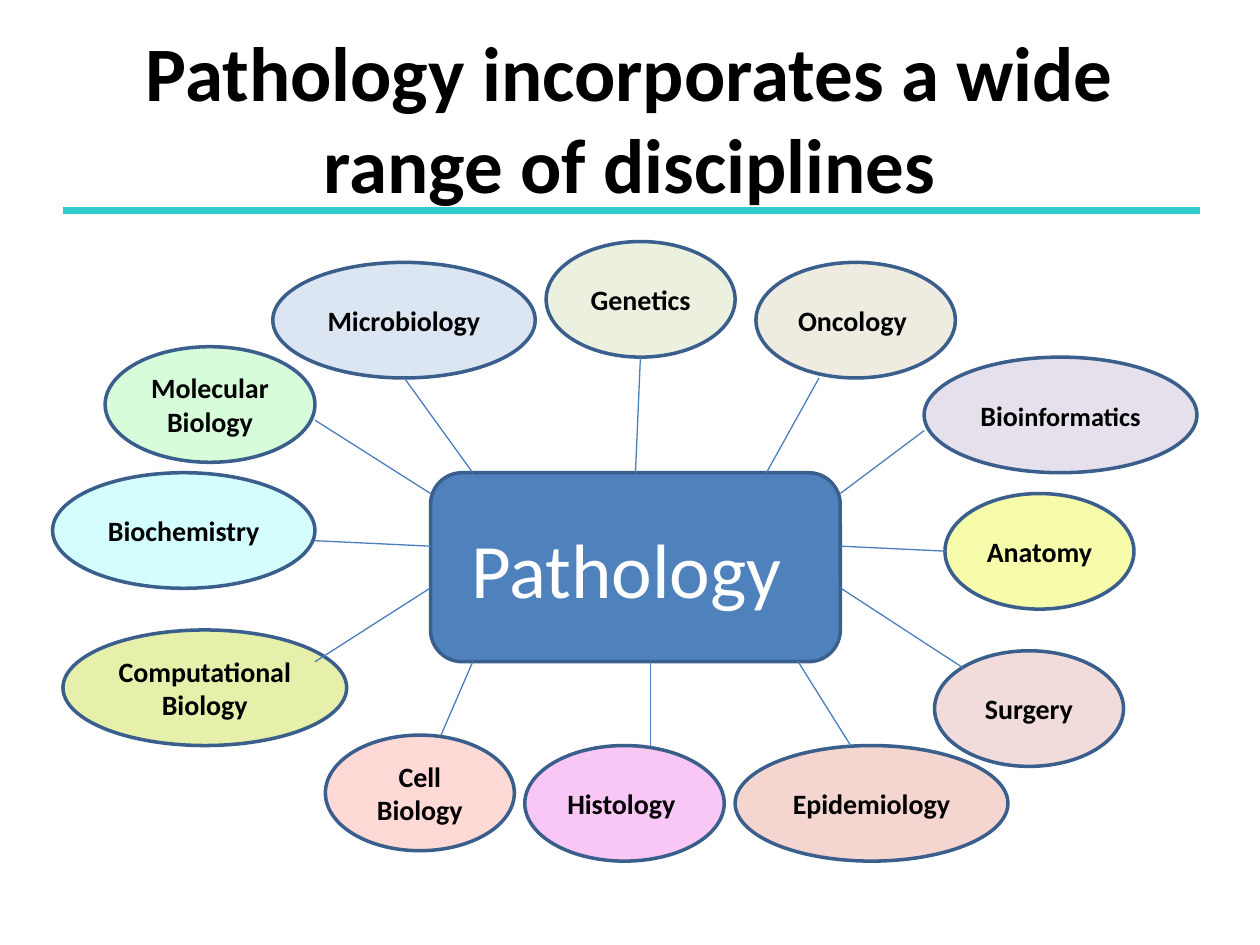
from pptx import Presentation
from pptx.dml.color import RGBColor
from pptx.enum.shapes import MSO_CONNECTOR as Connector, MSO_SHAPE as Shape
from pptx.enum.text import MSO_ANCHOR as Anchor, MSO_AUTO_SIZE as AutoSize, PP_ALIGN as Align
from pptx.util import Cm, Pt
from lxml.etree import SubElement
from pptx.oxml.ns import qn

THEME = {
    "font": "Calibri",
    "text": "000000", "hub_text": "FFFFFF", "hub": "4F81BD",
    "outline": "3A5F8C", "spoke": "4B7EBC", "rule": "33CCCC",
    "heading_size": 44, "label_size": 16, "small_size": 15,
    "outline_width": 2, "spoke_width": 0.75, "rule_width": 4,
}

TITLE = "Pathology incorporates a wide range of disciplines"
TITLE_BOX = (1.27, 0.76, 22.86, 3.18)
RULE = ((1.27, 4.24), (24.2, 4.24))

HUB_TEXT = "Pathology "
HUB_BOX = (8.68, 9.53, 8.26, 3.81)
BUBBLE_HEIGHT = 2.33

# label, fill, (left, top, width), (hub side, place along it), spoke tip
DISCIPLINES = [
    ("Molecular Biology", "D6FCDA", (2.12, 6.99, 4.23), ("left", 9.95), (6.35, 8.47)),
    ("Cell\nBiology", "FFD9D5", (6.56, 14.82, 3.81), ("bottom", 9.53), (8.89, 14.82)),
    ("Genetics", "EBF1DE", (11.01, 4.87, 3.81), ("top", 12.81), (12.91, 7.2)),
    ("Anatomy ", "F6FCAA", (19.05, 9.95, 3.81), ("right", 11.01), (19.05, 11.11)),
    ("Histology ", "F9C7F5", (10.58, 15.03, 4.02), ("bottom", 13.12), (13.12, 15.03)),
    ("Microbiology", "DCE6F2", (5.5, 5.29, 5.29), ("top", 9.53), (8.15, 7.62)),
    ("Biochemistry", "D4FEFE", (1.06, 9.53, 5.29), ("left", 11.01), (6.35, 10.9)),
    ("Epidemiology", "F5D5CF", (14.82, 15.03, 5.5), ("bottom", 16.09), (17.15, 15.03)),
    ("Oncology ", "EEECE1", (15.24, 5.29, 4.02), ("top", 15.45), (16.51, 7.62)),
    ("Surgery", "F2DCDB", (18.84, 13.12, 3.81), ("right", 11.85), (19.41, 13.46)),
    ("Bio|informatics", "E6E0EC", (18.63, 7.2, 5.5), ("right", 9.95), (18.63, 8.68)),
    ("Computational Biology", "E6F0AA", (1.27, 12.7, 5.72), ("left", 11.85), (6.35, 13.34)),
]


def color(name):
    return RGBColor.from_string(THEME.get(name, name))


def lengths(values):
    return [Cm(value) for value in values]


def write(frame, text, size, text_color, bold):
    frame.word_wrap = True
    frame.vertical_anchor = Anchor.MIDDLE
    for index, line in enumerate(text.split("\n")):
        paragraph = frame.add_paragraph() if index else frame.paragraphs[0]
        paragraph.alignment = Align.CENTER
        font = paragraph.font
        font.name, font.size, font.bold = THEME["font"], Pt(THEME[size]), bold
        font.color.rgb = color(text_color)
        start, _, small = line.partition("|")
        paragraph.add_run().text = start
        if small:
            run = paragraph.add_run()
            run.text = small
            run.font.size = Pt(THEME["small_size"])


def add_node(slide, kind, box, fill, text, size, text_color, bold):
    shape = slide.shapes.add_shape(kind, *lengths(box))
    shape.shadow.inherit = False
    shape.fill.solid()
    shape.fill.fore_color.rgb = color(fill)
    shape.line.color.rgb = color("outline")
    shape.line.width = Pt(THEME["outline_width"])
    write(shape.text_frame, text, size, text_color, bold)


def add_line(slide, start, end, kind):
    connector = slide.shapes.add_connector(Connector.STRAIGHT, *lengths(start + end))
    connector.line.color.rgb = color(kind)
    connector.line.width = Pt(THEME[kind + "_width"])
    SubElement(connector._element.spPr, qn("a:effectLst"))


def hub_point(side, place):
    left, top, width, height = HUB_BOX
    edges = {"left": left, "right": left + width, "top": top, "bottom": top + height}
    return (edges[side], place) if side in ("left", "right") else (place, edges[side])


def main():
    presentation = Presentation()
    presentation.slide_width, presentation.slide_height = Cm(25.4), Cm(19.05)
    slide = presentation.slides.add_slide(presentation.slide_layouts[5])

    title = slide.shapes.title
    title.left, title.top, title.width, title.height = lengths(TITLE_BOX)
    title.text_frame.auto_size = AutoSize.NONE
    write(title.text_frame, TITLE, "heading_size", "text", True)

    for label, fill, place, _, _ in DISCIPLINES:
        add_node(slide, Shape.OVAL, place + (BUBBLE_HEIGHT,), fill, label,
                 "label_size", "text", True)
    add_node(slide, Shape.ROUNDED_RECTANGLE, HUB_BOX, "hub", HUB_TEXT,
             "heading_size", "hub_text", False)
    for _, _, _, anchor, tip in DISCIPLINES:
        add_line(slide, hub_point(*anchor), tip, "spoke")
    add_line(slide, *RULE, "rule")

    presentation.save("out.pptx")


if __name__ == "__main__":
    main()
